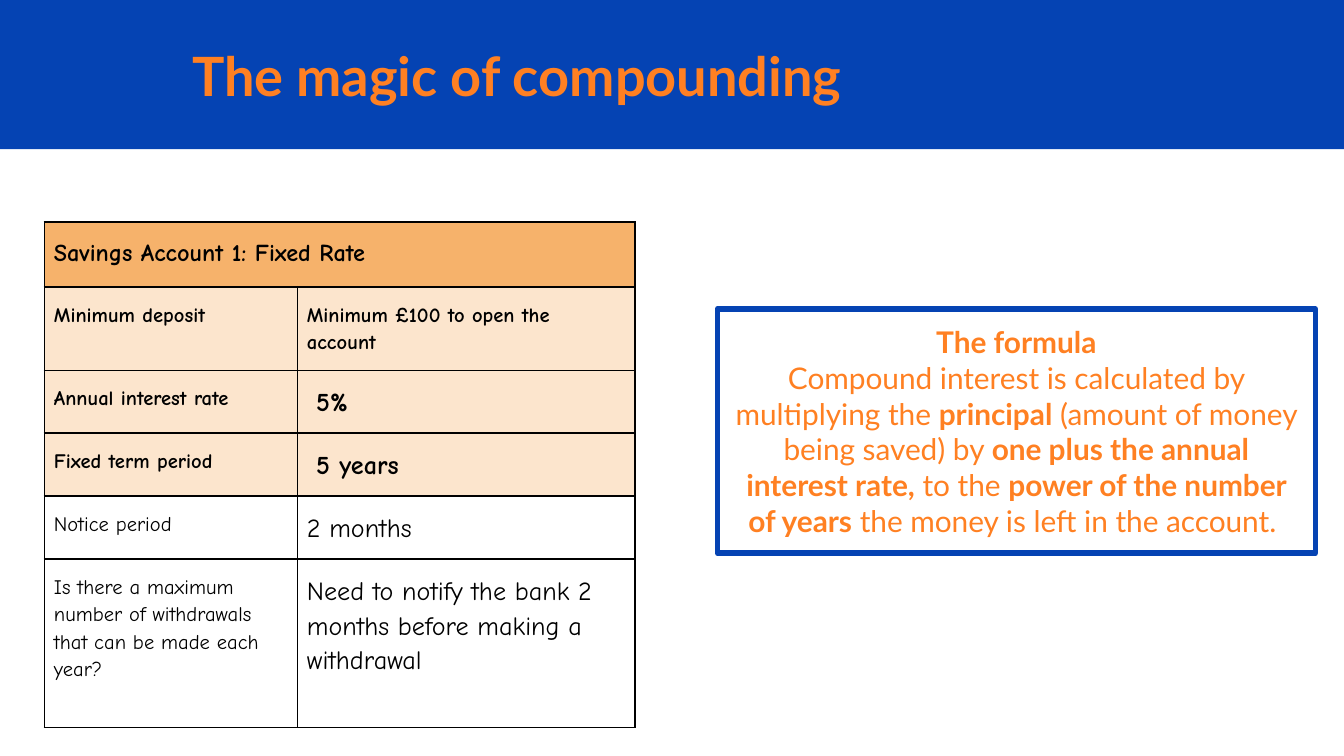
from lxml import etree
from pptx import Presentation
from pptx import util as u
from pptx.dml.color import RGBColor
from pptx.enum import shapes, text
from pptx.oxml import ns

BLUE = RGBColor(0x05, 0x43, 0xB3)
ORANGE = RGBColor(0xFF, 0x80, 0x22)
PEACH = RGBColor(0xF6, 0xB2, 0x6B)
CREAM = RGBColor(0xFC, 0xE5, 0xCD)
WHITE = RGBColor(0xFF, 0xFF, 0xFF)
BLACK = RGBColor(0, 0, 0)

HEADING = "Savings Account 1: Fixed Rate"
TERMS = [
    ("Minimum deposit", "Minimum £100 to open the account", 11, True),
    ("Annual interest rate", " 5%", 14, True),
    ("Fixed term period", " 5 years", 14, True),
    ("Notice period", "2 months", 14, False),
    ("Is there a maximum number of withdrawals that can be made each year?",
     "Need to notify the bank 2 months before making a withdrawal", 14, False),
]
FORMULA = [
    [("The formula", True)],
    [("Compound interest is calculated by multiplying the ", False),
     ("principal", True),
     (" (amount of money being saved) by ", False),
     ("one plus the annual interest rate,", True),
     (" to the ", False),
     ("power of the number of years", True),
     (" the money is left in the account. ", False)],
]


class Deck:
    display_font = "Lato"
    table_font = "Comic Neue"
    inset = u.Cm(0.25)

    def __init__(self, width, height):
        self.deck = Presentation()
        self.deck.slide_width, self.deck.slide_height = u.Cm(width), u.Cm(height)
        self.slide = self.deck.slides.add_slide(self.deck.slide_layouts[6])

    def style(self, run, font, size, color, bold):
        run.font.name = font
        run.font.size = u.Pt(size)
        run.font.color.rgb = color
        run.font.bold = bold

    def frame(self, owner):
        frame = owner.text_frame
        frame.word_wrap = True
        frame.vertical_anchor = text.MSO_ANCHOR.MIDDLE
        frame.margin_left = frame.margin_right = self.inset
        frame.margin_top = frame.margin_bottom = self.inset
        return frame

    def rectangle(self, box, fill, line=None):
        panel = self.slide.shapes.add_shape(
            shapes.MSO_SHAPE.RECTANGLE, *map(u.Cm, box))
        panel.shadow.inherit = False
        panel.fill.solid()
        panel.fill.fore_color.rgb = fill
        if line is None:
            panel.line.fill.background()
        else:
            panel.line.color.rgb = line
            panel.line.width = u.Pt(3)
        return panel

    def title(self, box, wording):
        frame = self.frame(self.slide.shapes.add_textbox(*map(u.Cm, box)))
        frame.text = wording
        self.style(frame.paragraphs[0].runs[0], self.display_font, 29, ORANGE, True)

    def callout(self, box, paragraphs):
        frame = self.frame(self.rectangle(box, WHITE, BLUE))
        for index, parts in enumerate(paragraphs):
            paragraph = frame.add_paragraph() if index else frame.paragraphs[0]
            paragraph.alignment = text.PP_ALIGN.CENTER
            for wording, bold in parts:
                run = paragraph.add_run()
                run.text = wording
                self.style(run, self.display_font, 16, ORANGE, bold)

    def borders(self, cell):
        properties = cell._tc.get_or_add_tcPr()
        for side in ("lnL", "lnR", "lnT", "lnB"):
            line = etree.SubElement(properties, ns.qn(f"a:{side}"), w=str(u.Pt(1)))
            fill = etree.SubElement(line, ns.qn("a:solidFill"))
            etree.SubElement(fill, ns.qn("a:srgbClr"), val=str(BLACK))

    def cell(self, cell, wording, size, bold, fill):
        cell.margin_left = cell.margin_right = u.Cm(0.18)
        cell.margin_top = cell.margin_bottom = self.inset
        if fill is None:
            cell.fill.background()
        else:
            cell.fill.solid()
            cell.fill.fore_color.rgb = fill
        cell.text_frame.text = wording
        paragraph = cell.text_frame.paragraphs[0]
        paragraph.line_spacing = 1.15
        self.style(paragraph.runs[0], self.table_font, size, BLACK, bold)

    def table(self, left, top, widths, heights, heading, terms):
        grid = self.slide.shapes.add_table(
            len(heights), len(widths), u.Cm(left), u.Cm(top),
            u.Cm(sum(widths)), u.Cm(sum(heights))).table
        grid.first_row = grid.horz_banding = False
        for column, width in zip(grid.columns, widths):
            column.width = u.Cm(width)
        for row, height in zip(grid.rows, heights):
            row.height = u.Cm(height)
        for cell in grid.iter_cells():
            self.borders(cell)
        grid.cell(0, 0).merge(grid.cell(0, 1))
        self.cell(grid.cell(0, 0), heading, 13, True, PEACH)
        for row, (term, value, size, key) in enumerate(terms, 1):
            fill = CREAM if key else None
            self.cell(grid.cell(row, 0), term, 11, key, fill)
            self.cell(grid.cell(row, 1), value, size, key, fill)

    def save(self):
        self.deck.save("out.pptx")


def main():
    deck = Deck(25.4, 14.29)
    deck.rectangle((0, 0, 25.4, 2.82), BLUE)
    deck.callout((13.56, 5.84, 11.3, 4.62), FORMULA)
    deck.table(0.84, 4.2, (4.78, 6.38), (1.22, 1.58, 1.19, 1.19, 1.19, 3.18),
               HEADING, TERMS)
    deck.title((3.38, 0.71, 21.49, 1.42), "The magic of compounding")
    deck.save()


if __name__ == "__main__":
    main()
